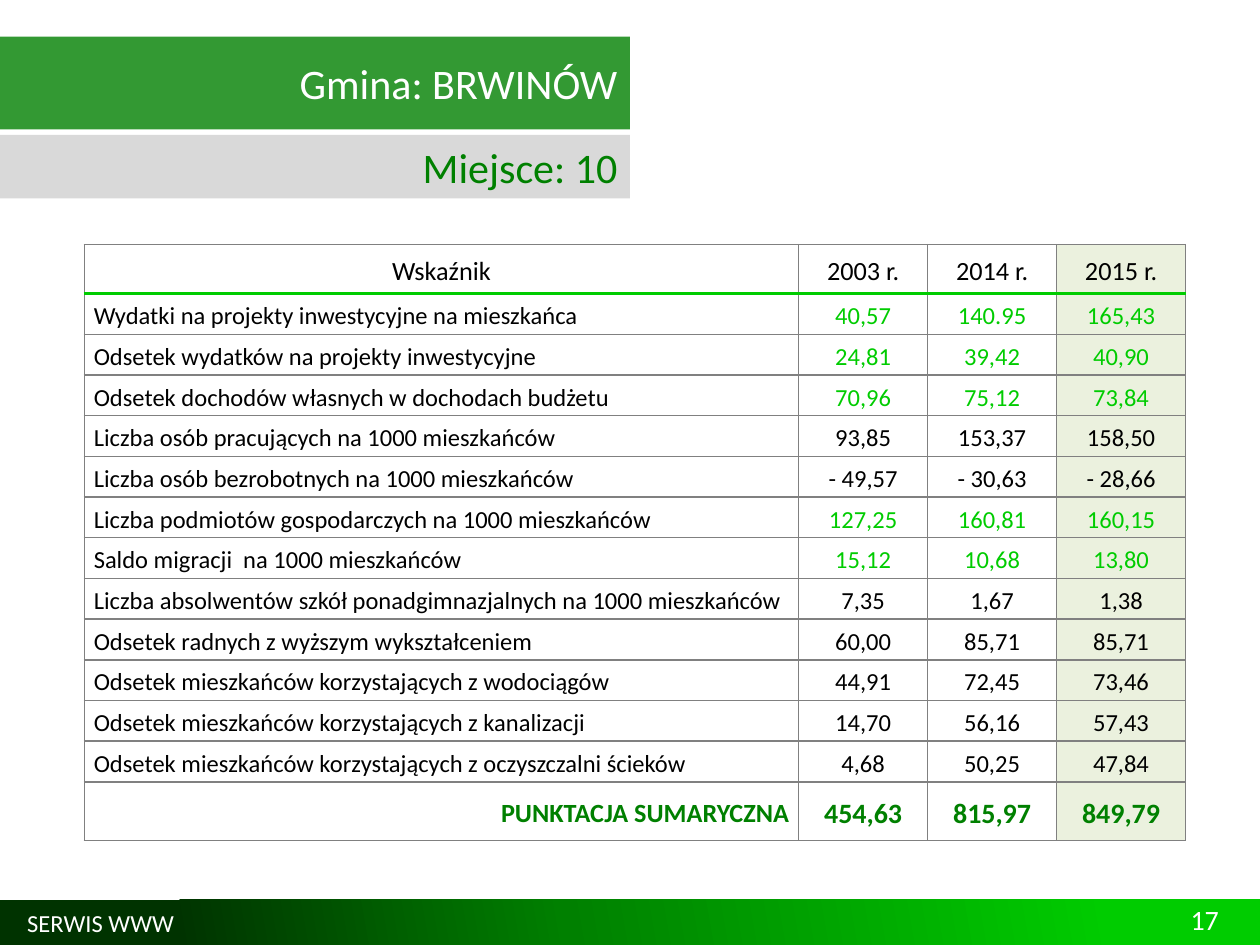
from dataclasses import dataclass

from lxml.etree import SubElement
from pptx import Presentation
from pptx.dml.color import RGBColor as Color
from pptx.enum.shapes import MSO_SHAPE as Shape
from pptx.enum.text import MSO_ANCHOR as Anchor, MSO_AUTO_SIZE as AutoSize, PP_ALIGN as Align
from pptx.oxml import parse_xml
from pptx.oxml.ns import nsdecls, qn
from pptx.util import Cm, Pt


@dataclass(frozen=True)
class Theme:
    font: str = "Calibri"
    black: str = "000000"
    white: str = "FFFFFF"
    banner: str = "339933"
    place_band: str = "D9D9D9"
    green: str = "008000"
    bright: str = "00CC00"
    dark: str = "003300"
    latest_year: str = "EBF1DE"
    grid: str = "808080"
    grid_width: float = 1
    header_line_width: float = 2.25
    heading_size: int = 24
    total_size: int = 16
    header_size: int = 15
    body_size: int = 14
    line_spacing: float = 1.15


THEME = Theme()

HEADER = ("Wskaźnik", "2003 r.", "2014 r.", "2015 r.")
# Each indicator: name, values by year, highlighted or not
INDICATORS = [
    ("Wydatki na projekty inwestycyjne na mieszkańca", ("40,57", "140.95", "165,43"), True),
    ("Odsetek wydatków na projekty inwestycyjne", ("24,81", "39,42", "40,90"), True),
    ("Odsetek dochodów własnych w dochodach budżetu", ("70,96", "75,12", "73,84"), True),
    ("Liczba osób pracujących na 1000 mieszkańców", ("93,85", "153,37", "158,50"), False),
    ("Liczba osób bezrobotnych na 1000 mieszkańców", ("- 49,57", "- 30,63", "- 28,66"), False),
    ("Liczba podmiotów gospodarczych na 1000 mieszkańców", ("127,25", "160,81", "160,15"), True),
    ("Saldo migracji  na 1000 mieszkańców", ("15,12", "10,68", "13,80"), True),
    ("Liczba absolwentów szkół ponadgimnazjalnych na 1000 mieszkańców",
     ("7,35", "1,67", "1,38"), False),
    ("Odsetek radnych z wyższym wykształceniem", ("60,00", "85,71", "85,71"), False),
    ("Odsetek mieszkańców korzystających z wodociągów", ("44,91", "72,45", "73,46"), False),
    ("Odsetek mieszkańców korzystających z kanalizacji", ("14,70", "56,16", "57,43"), False),
    ("Odsetek mieszkańców korzystających z oczyszczalni ścieków",
     ("4,68", "50,25", "47,84"), False),
]
TOTAL = ("PUNKTACJA SUMARYCZNA", "454,63", "815,97", "849,79")

COLUMN_WIDTHS = (14.4, 2.6, 2.6, 2.6)
HEADER_HEIGHT, ROW_HEIGHT, TOTAL_HEIGHT = 0.99, 0.82, 1.18


def set_attributes(target, values):
    for name, value in values.items():
        setattr(target, name, value)


def place(shape, left, top, width, height):
    set_attributes(shape, {"left": Cm(left), "top": Cm(top),
                           "width": Cm(width), "height": Cm(height)})


def write_text(text_frame, text, size, color, align=Align.LEFT, bold=False, spacing=1.0):
    paragraph = text_frame.paragraphs[0]
    set_attributes(paragraph, {"alignment": align, "line_spacing": spacing})
    run = paragraph.add_run()
    run.text = text
    set_attributes(run.font, {"name": THEME.font, "size": Pt(size), "bold": bold})
    run.font.color.rgb = Color.from_string(color)


def fill_solid(target, color):
    target.fill.solid()
    target.fill.fore_color.rgb = Color.from_string(color)


def write_band(shape, box, text, fill, color):
    """Turn a shape into a filled heading band with right-aligned text."""
    place(shape, *box)
    fill_solid(shape, fill)
    set_attributes(shape.text_frame, {"auto_size": AutoSize.NONE, "word_wrap": True,
                                      "vertical_anchor": Anchor.MIDDLE})
    write_text(shape.text_frame, text, THEME.heading_size, color, Align.RIGHT)


def add_rectangle(slide, box):
    shape = slide.shapes.add_shape(Shape.RECTANGLE, *map(Cm, box))
    shape.shadow.inherit = False
    shape.line.fill.background()
    return shape


def add_label(slide, box, text, size, align=Align.LEFT):
    label = slide.shapes.add_textbox(*map(Cm, box))
    set_attributes(label.text_frame, {"word_wrap": True, "vertical_anchor": Anchor.MIDDLE})
    write_text(label.text_frame, text, size, THEME.white, align)


def add_footer_bar(slide):
    bar = add_rectangle(slide, (0, 18.14, 25.4, 0.91))
    bar.fill.gradient()
    bar.fill.gradient_angle = 10
    stop_list = next(bar._element.iter(qn("a:gsLst")))
    for stop in list(stop_list):
        stop_list.remove(stop)
    for percent, color in ((14, THEME.dark), (45, THEME.green), (88, THEME.bright)):
        stop = SubElement(stop_list, qn("a:gs"), pos=str(percent * 1000))
        SubElement(stop, qn("a:srgbClr"), val=color)


def set_border(cell, side, color, width):
    cell._tc.get_or_add_tcPr().append(parse_xml(
        f'<a:ln{side} {nsdecls("a")} w="{Pt(width)}"><a:solidFill>'
        f'<a:srgbClr val="{color}"/></a:solidFill></a:ln{side}>'))


def format_cell(cell, row, column):
    set_attributes(cell, {"vertical_anchor": Anchor.MIDDLE, "margin_left": Cm(0.19),
                          "margin_right": Cm(0.19), "margin_top": 0, "margin_bottom": 0})
    for side in "LRTB":
        if (row, side) in ((0, "B"), (1, "T")):
            set_border(cell, side, THEME.bright, THEME.header_line_width)
        else:
            set_border(cell, side, THEME.grid, THEME.grid_width)
    if column == len(HEADER) - 1:
        fill_solid(cell, THEME.latest_year)
    else:
        cell.fill.background()


def write_row(table, row, texts, sizes, colors, name_align, bold=False):
    """Fill one row; sizes and colors are pairs for the name and the values."""
    for column, text in enumerate(texts):
        cell = table.cell(row, column)
        format_cell(cell, row, column)
        kind = min(column, 1)
        align = Align.CENTER if kind else name_align
        write_text(cell.text_frame, text, sizes[kind], colors[kind], align, bold,
                   THEME.line_spacing)


def add_indicator_table(slide):
    heights = [HEADER_HEIGHT] + [ROW_HEIGHT] * len(INDICATORS) + [TOTAL_HEIGHT]
    frame = slide.shapes.add_table(len(heights), len(HEADER), Cm(1.7), Cm(4.93),
                                   Cm(sum(COLUMN_WIDTHS)), Cm(sum(heights)))
    table = frame.table
    set_attributes(table, {"first_row": False, "horz_banding": False})
    for column, width in zip(table.columns, COLUMN_WIDTHS):
        column.width = Cm(width)
    for row, height in zip(table.rows, heights):
        row.height = Cm(height)

    write_row(table, 0, HEADER, (THEME.header_size,) * 2, (THEME.black,) * 2, Align.CENTER)
    for row, (name, values, highlighted) in enumerate(INDICATORS, start=1):
        value_color = THEME.bright if highlighted else THEME.black
        write_row(table, row, (name, *values), (THEME.body_size,) * 2,
                  (THEME.black, value_color), Align.LEFT)
    write_row(table, len(heights) - 1, TOTAL, (THEME.header_size, THEME.total_size),
              (THEME.green,) * 2, Align.RIGHT, bold=True)


def main():
    presentation = Presentation()
    set_attributes(presentation, {"slide_width": Cm(25.4), "slide_height": Cm(19.05)})
    slide = presentation.slides.add_slide(presentation.slide_layouts[5])

    add_footer_bar(slide)
    add_indicator_table(slide)
    add_label(slide, (0.3, 18.14, 8.05, 0.91), "SERWIS WWW", THEME.body_size)
    write_band(slide.shapes.title, (0, 0.74, 12.7, 1.87), "Gmina: BRWINÓW",
               THEME.banner, THEME.white)
    place_box = (0, 2.72, 12.7, 1.28)
    write_band(add_rectangle(slide, place_box), place_box, "Miejsce: 10",
               THEME.place_band, THEME.green)
    add_label(slide, (18.9, 18.03, 5.92, 1.02), "17", THEME.total_size, Align.RIGHT)

    presentation.save("out.pptx")


if __name__ == "__main__":
    main()
